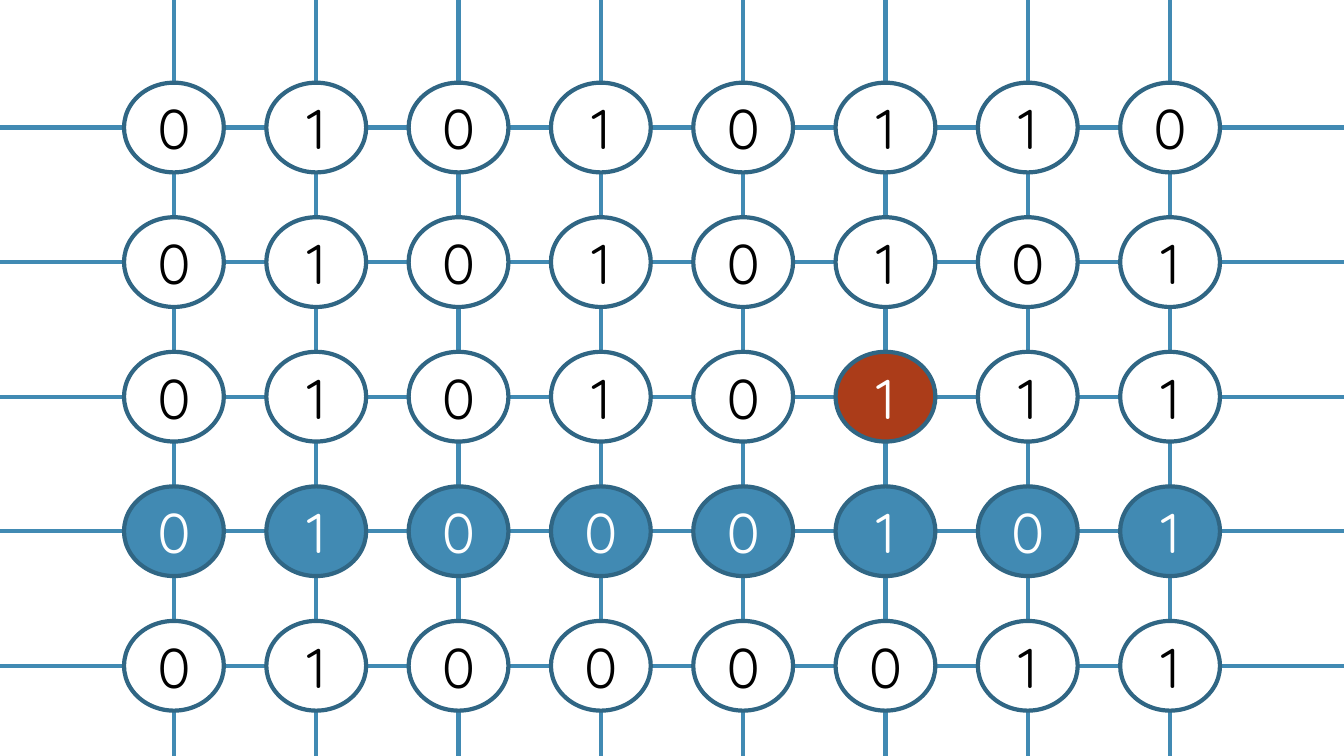
from lxml.etree import SubElement
from pptx import Presentation
from pptx.dml.color import RGBColor
from pptx.enum.shapes import MSO_CONNECTOR, MSO_SHAPE
from pptx.enum.text import MSO_ANCHOR, PP_ALIGN
from pptx.oxml.ns import qn
from pptx.util import Inches, Pt

COLORS = {
    "wire": "418AB3",
    "outline": "306684",
    "plain": "FFFFFF",
    "row": "418AB3",
    "cell": "AB3C19",
    "dark_text": "000000",
    "light_text": "FFFFFF",
}
PAGE_WIDTH, PAGE_HEIGHT = 13.33, 7.5
BITS = ["01010110", "01010101", "01010111", "01000101", "01000011"]
SELECTED_ROW = 3
SELECTED_CELL = (2, 5)
CELL_WIDTH, CELL_HEIGHT = 0.99, 0.89
MEMORY_BOX = (1.23, 0.82, 10.87, 6.23)


def color(name):
    return RGBColor.from_string(COLORS[name])


def spread(start, length, size, count):
    """Return the starts of equally spaced items that fill a length."""
    pitch = (length - size) / (count - 1)
    return [start + index * pitch for index in range(count)]


def add_wire(page, x1, y1, x2, y2):
    wire = page.shapes.add_connector(
        MSO_CONNECTOR.STRAIGHT, Inches(x1), Inches(y1), Inches(x2), Inches(y2))
    wire.line.color.rgb = color("wire")
    wire.line.width = Pt(3)
    SubElement(wire._element.spPr, qn("a:effectLst"))


def add_bit(group, left, top, digit, fill):
    bit = group.shapes.add_shape(
        MSO_SHAPE.OVAL, Inches(left), Inches(top),
        Inches(CELL_WIDTH), Inches(CELL_HEIGHT))
    bit.shadow.inherit = False
    bit.fill.solid()
    bit.fill.fore_color.rgb = color(fill)
    bit.line.color.rgb = color("outline")
    bit.line.width = Pt(3)

    frame = bit.text_frame
    frame.margin_left = frame.margin_right = 0
    frame.margin_top = frame.margin_bottom = 0
    frame.vertical_anchor = MSO_ANCHOR.MIDDLE
    para = frame.paragraphs[0]
    para.alignment = PP_ALIGN.CENTER
    span = para.add_run()
    span.text = digit
    span.font.name = "Quicksand"
    span.font.size = Pt(40)
    span.font.color.rgb = color("dark_text" if fill == "plain" else "light_text")


def fill_name(row, column):
    if (row, column) == SELECTED_CELL:
        return "cell"
    return "row" if row == SELECTED_ROW else "plain"


def add_memory_grid(page, left, top, width, height):
    """Draw page-wide wires with one bit on every crossing in the box."""
    lefts = spread(left, width, CELL_WIDTH, len(BITS[0]))
    tops = spread(top, height, CELL_HEIGHT, len(BITS))

    for y in tops:
        center = y + CELL_HEIGHT / 2
        add_wire(page, 0, center, PAGE_WIDTH, center)
    for x in lefts:
        center = x + CELL_WIDTH / 2
        add_wire(page, center, 0, center, PAGE_HEIGHT)

    for row, (y, digits) in enumerate(zip(tops, BITS)):
        group = page.shapes.add_group_shape()
        for column, (x, digit) in enumerate(zip(lefts, digits)):
            add_bit(group, x, y, digit, fill_name(row, column))


def main():
    deck = Presentation()
    deck.slide_width = Inches(PAGE_WIDTH)
    deck.slide_height = Inches(PAGE_HEIGHT)
    page = deck.slides.add_slide(deck.slide_layouts[6])
    add_memory_grid(page, *MEMORY_BOX)
    deck.save("out.pptx")


if __name__ == "__main__":
    main()
